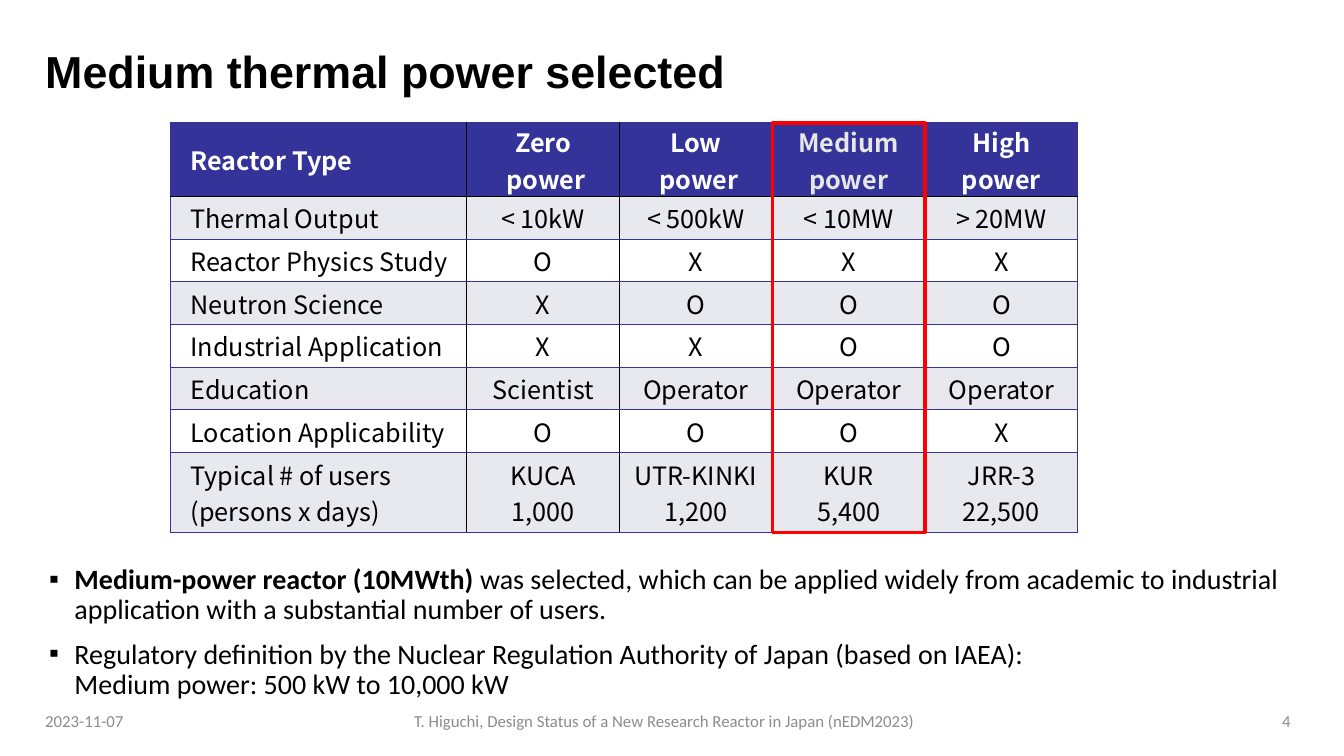
import pptx
import pptx.dml.color
import pptx.enum.shapes
import pptx.enum.text
import pptx.oxml
import pptx.oxml.ns
import pptx.util

Inches, Pt = pptx.util.Inches, pptx.util.Pt
RGBColor = pptx.dml.color.RGBColor
ALIGN = pptx.enum.text.PP_ALIGN
ANCHOR = pptx.enum.text.MSO_ANCHOR

BLACK = RGBColor(0x00, 0x00, 0x00)
WHITE = RGBColor(0xFF, 0xFF, 0xFF)
NAVY = RGBColor(0x33, 0x33, 0x99)
BAND = RGBColor(0xE8, 0xE8, 0xEF)
PALE = RGBColor(0xE7, 0xE6, 0xE6)
GRAY = RGBColor(0x8C, 0x8C, 0x8C)
RED = RGBColor(0xFF, 0x00, 0x00)

# Slide and table grid, in inches
WIDTH, HEIGHT = 13.33, 7.5
MARGIN = 0.35
CONTENT = 12.56
GRID_LEFT, GRID_TOP, GRID_WIDTH, GRID_HEIGHT = 1.69, 1.22, 9, 4.06
LABEL_WIDTH, HEADER_HEIGHT, USERS_HEIGHT = 2.94, 0.73, 0.79
SELECTED = 3

REACTORS = [
    ["Reactor Type", "Zero\n power", "Low\n power", "Medium power", "High\npower"],
    ["Thermal Output", "< 10kW", "< 500kW", "< 10MW", "> 20MW"],
    ["Reactor Physics Study", "O", "X", "X", "X"],
    ["Neutron Science", "X", "O", "O", "O"],
    ["Industrial Application", "X", "X", "O", "O"],
    ["Education", "Scientist", "Operator", "Operator", "Operator"],
    ["Location Applicability", "O", "O", "O", "X"],
    ["Typical # of users\v(persons x days)", "KUCA\n1,000", "UTR-KINKI\n1,200",
     "KUR\n5,400", "JRR-3\n22,500"],
]

FINDINGS = [
    [("Medium-power reactor (10MWth) ", True),
     ("was selected, which can be applied widely from academic to industrial "
      "application with a substantial number of users.", False)],
    [("Regulatory definition by the Nuclear Regulation Authority of Japan "
      "(based on IAEA):\vMedium power: 500 kW to 10,000 kW", False)],
]


def set_all(target, values):
    for name, value in values.items():
        setattr(target, name, value)


def format_font(font, name, size, color, bold=False):
    set_all(font, {"name": name, "size": Pt(size), "bold": bold})
    font.color.rgb = color


def add_box(slide, left, top, width, height, anchor=ANCHOR.MIDDLE):
    box = slide.shapes.add_textbox(*map(Inches, (left, top, width, height)))
    set_all(box.text_frame, {"word_wrap": True, "vertical_anchor": anchor})
    return box.text_frame


def add_line(slide, place, text, align, font, spacing=None):
    paragraph = add_box(slide, *place).paragraphs[0]
    paragraph.text = text
    set_all(paragraph, {"alignment": align, "line_spacing": spacing})
    format_font(paragraph.runs[0].font, *font)


def add_findings(slide, place):
    frame = add_box(slide, *place, anchor=ANCHOR.TOP)
    for index, pieces in enumerate(FINDINGS):
        paragraph = frame.add_paragraph() if index else frame.paragraphs[0]
        properties = paragraph._p.get_or_add_pPr()
        properties.set("marL", str(Inches(0.25)))
        properties.set("indent", str(-Inches(0.25)))
        for tag, key, value in (("buFont", "typeface", "Arial"),
                                ("buChar", "char", "▪")):
            bullet = pptx.oxml.parse_xml(
                f'<a:{tag} {pptx.oxml.ns.nsdecls("a")} {key}="{value}"/>')
            properties.append(bullet)
        set_all(paragraph, {"line_spacing": 0.9,
                            "space_before": Pt(10 if index else 0)})
        for text, bold in pieces:
            for part, line in enumerate(text.split("\v")):
                if part:
                    paragraph.add_line_break()
                run = paragraph.add_run()
                run.text = line
                format_font(run.font, "Calibri", 20, BLACK, bold)


def add_borders(cell, colors):
    for side, color in colors.items():
        cell._tc.get_or_add_tcPr().append(pptx.oxml.parse_xml(
            f'<a:ln{side} {pptx.oxml.ns.nsdecls("a")} w="{Pt(1)}"><a:solidFill>'
            f'<a:srgbClr val="{color}"/></a:solidFill></a:ln{side}>'))


def fill_cell(cell, text, row, column):
    header, label = row == 0, column == 0
    last_column = column == len(REACTORS[0]) - 1
    add_borders(cell, {"L": NAVY if label else BLACK,
                       "R": NAVY if last_column else BLACK,
                       "T": BLACK if row == 1 else NAVY,
                       "B": BLACK if header else NAVY})
    cell.fill.solid()
    cell.fill.fore_color.rgb = NAVY if header else BAND if row % 2 else WHITE
    set_all(cell, {"margin_left": Inches(0.2 if label else 0), "margin_right": 0,
                   "margin_top": 0, "margin_bottom": 0,
                   "vertical_anchor": ANCHOR.MIDDLE})
    color = BLACK if not header else PALE if column == SELECTED else WHITE
    cell.text_frame.text = text
    for paragraph in cell.text_frame.paragraphs:
        paragraph.alignment = ALIGN.LEFT if label else ALIGN.CENTER
        for run in paragraph.runs:
            format_font(run.font, "Noto Sans CJK JP", 18, color, header)


def add_reactor_table(slide):
    rows, columns = len(REACTORS), len(REACTORS[0])
    power_width = (GRID_WIDTH - LABEL_WIDTH) / (columns - 1)
    row_height = (GRID_HEIGHT - HEADER_HEIGHT - USERS_HEIGHT) / (rows - 2)
    table = slide.shapes.add_table(rows, columns, *map(
        Inches, (GRID_LEFT, GRID_TOP, GRID_WIDTH, GRID_HEIGHT))).table
    table.horz_banding = False
    for column in range(columns):
        table.columns[column].width = Inches(power_width if column else LABEL_WIDTH)
    special_heights = {0: HEADER_HEIGHT, rows - 1: USERS_HEIGHT}
    for row, texts in enumerate(REACTORS):
        table.rows[row].height = Inches(special_heights.get(row, row_height))
        for column, text in enumerate(texts):
            fill_cell(table.cell(row, column), text, row, column)

    # Frame around the selected power class
    frame_left = GRID_LEFT + LABEL_WIDTH + (SELECTED - 1) * power_width
    frame = slide.shapes.add_shape(
        pptx.enum.shapes.MSO_SHAPE.RECTANGLE,
        *map(Inches, (frame_left, GRID_TOP, power_width, GRID_HEIGHT)))
    frame.shadow.inherit = False
    frame.fill.background()
    frame.line.color.rgb = RED
    frame.line.width = Pt(2.25)


def main():
    deck = pptx.Presentation()
    set_all(deck, {"slide_width": Inches(WIDTH), "slide_height": Inches(HEIGHT)})
    slide = deck.slides.add_slide(deck.slide_layouts[6])

    # Title, table and findings
    add_line(slide, (MARGIN, 0.4, CONTENT, 0.67), "Medium thermal power selected",
             ALIGN.LEFT, ("Arial", 32, BLACK, True), 0.9)
    add_reactor_table(slide)
    add_findings(slide, (0.39, 5.56, CONTENT, 1.54))

    # Footer
    footer = [
        (MARGIN, 3, "2023-11-07", ALIGN.LEFT),
        (3.47, 6.24, "T. Higuchi, Design Status of a New Research Reactor in Japan "
                     "(nEDM2023)", ALIGN.CENTER),
        (9.9, 3, "4", ALIGN.RIGHT),
    ]
    for left, width, text, align in footer:
        add_line(slide, (left, 6.95, width, 0.4), text, align, ("Calibri", 12, GRAY))

    deck.save("out.pptx")


if __name__ == "__main__":
    main()
